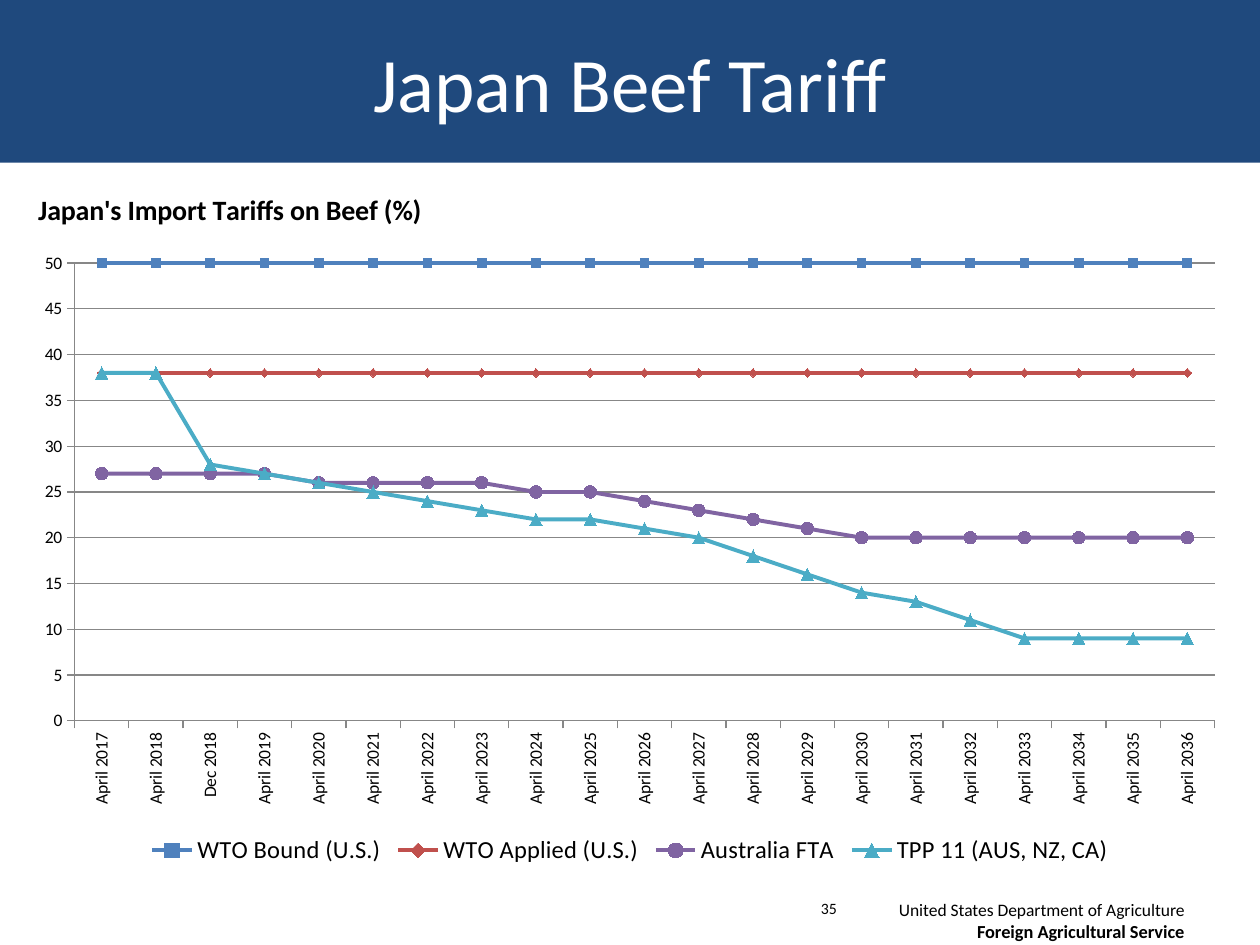
from dataclasses import dataclass

from lxml import etree
from pptx import Presentation
from pptx.chart.data import CategoryChartData
from pptx.dml.color import RGBColor
from pptx.enum.chart import XL_CHART_TYPE, XL_LEGEND_POSITION, XL_MARKER_STYLE, XL_TICK_MARK
from pptx.enum.text import MSO_ANCHOR, PP_ALIGN
from pptx.oxml.ns import qn
from pptx.util import Pt

LINE_MARKERS = XL_CHART_TYPE.LINE_MARKERS
BOTTOM = XL_LEGEND_POSITION.BOTTOM
OUTSIDE = XL_TICK_MARK.OUTSIDE
SQUARE, DIAMOND = XL_MARKER_STYLE.SQUARE, XL_MARKER_STYLE.DIAMOND
CIRCLE, TRIANGLE = XL_MARKER_STYLE.CIRCLE, XL_MARKER_STYLE.TRIANGLE
MIDDLE = MSO_ANCHOR.MIDDLE
LEFT, CENTER, RIGHT = PP_ALIGN.LEFT, PP_ALIGN.CENTER, PP_ALIGN.RIGHT


@dataclass(frozen=True)
class Theme:
    face: str = "Calibri"
    banner: RGBColor = RGBColor(0x1F, 0x49, 0x7D)
    banner_text: RGBColor = RGBColor(0xFF, 0xFF, 0xFF)
    text: RGBColor = RGBColor(0, 0, 0)
    grid: RGBColor = RGBColor(0x87, 0x87, 0x87)
    bound: RGBColor = RGBColor(0x4F, 0x81, 0xBD)
    applied: RGBColor = RGBColor(0xC0, 0x50, 0x4D)
    australia: RGBColor = RGBColor(0x80, 0x64, 0xA2)
    tpp: RGBColor = RGBColor(0x4B, 0xAC, 0xC6)
    title_size: float = 44
    chart_title_size: float = 16
    legend_size: float = 14
    axis_size: float = 10
    department_size: float = 10
    service_size: float = 10.5
    number_size: float = 9


THEME = Theme()

PERIODS = ["April 2017", "April 2018", "Dec 2018"] + [f"April {year}" for year in range(2019, 2037)]

# name, tariff rates, colour, marker style, marker size
TARIFFS = [
    ("WTO Bound (U.S.)", [50] * 21, THEME.bound, SQUARE, 5),
    ("WTO Applied (U.S.)", [38] * 21, THEME.applied, DIAMOND, 5),
    ("Australia FTA",
     [27] * 4 + [26] * 4 + [25, 25, 24, 23, 22, 21] + [20] * 7,
     THEME.australia, CIRCLE, 7),
    ("TPP 11 (AUS, NZ, CA)",
     [38, 38, 28, 27, 26, 25, 24, 23, 22, 22, 21, 20, 18, 16, 14, 13, 11, 9, 9, 9, 9],
     THEME.tpp, TRIANGLE, 7),
]


def style_font(font, size, color=THEME.text, bold=False):
    font.name = THEME.face
    font.size = Pt(size)
    font.bold = bold
    font.color.rgb = color


def add_banner(slide, box, text):
    title = slide.shapes.title
    title.left, title.top, title.width, title.height = box
    title.fill.solid()
    title.fill.fore_color.rgb = THEME.banner
    frame = title.text_frame
    frame.text = text
    frame.vertical_anchor = MIDDLE
    paragraph = frame.paragraphs[0]
    paragraph.alignment = CENTER
    style_font(paragraph.font, THEME.title_size, THEME.banner_text)


def add_lines(slide, box, lines, alignment):
    """Add a text box; each line is (text, size, bold)."""
    frame = slide.shapes.add_textbox(*box).text_frame
    frame.word_wrap = True
    frame.text = "\n".join(text for text, _, _ in lines)
    for paragraph, (_, size, bold) in zip(frame.paragraphs, lines):
        paragraph.alignment = alignment
        style_font(paragraph.font, size, bold=bold)


def set_layout(parent, index, **fractions):
    """Place a chart part by fractions of the chart's size."""
    for old in parent.findall(qn("c:layout")):
        parent.remove(old)
    layout = etree.Element(qn("c:layout"))
    parent.insert(index, layout)
    manual = etree.SubElement(layout, qn("c:manualLayout"))
    if "w" in fractions and index == 0:
        etree.SubElement(manual, qn("c:layoutTarget")).set("val", "inner")
    for axis in ("x", "y"):
        etree.SubElement(manual, qn(f"c:{axis}Mode")).set("val", "edge")
    for key, value in fractions.items():
        etree.SubElement(manual, qn(f"c:{key}")).set("val", str(value))


def format_axes(chart):
    values, periods = chart.value_axis, chart.category_axis
    values.minimum_scale, values.maximum_scale, values.major_unit = 0, 50, 5
    values.has_major_gridlines = True
    values.tick_labels.number_format = "General"
    values.tick_labels.number_format_is_linked = False
    for axis in (values, periods):
        axis.major_tick_mark = OUTSIDE
        style_font(axis.tick_labels.font, THEME.axis_size)
    for line in (values.format.line, periods.format.line, values.major_gridlines.format.line):
        line.color.rgb = THEME.grid
        line.width = Pt(0.75)
    label_body = periods._element.find(qn("c:txPr")).find(qn("a:bodyPr"))
    label_body.set("rot", "-5400000")
    label_body.set("vert", "horz")


def format_series(series, color, marker_style, marker_size):
    series.smooth = False
    series.format.line.color.rgb = color
    series.format.line.width = Pt(2.25)
    marker = series.marker
    marker.style, marker.size = marker_style, marker_size
    marker.format.fill.solid()
    marker.format.fill.fore_color.rgb = color
    marker.format.line.color.rgb = color


def add_tariff_chart(slide, box):
    data = CategoryChartData(number_format="General")
    data.categories = PERIODS
    for name, rates, *_ in TARIFFS:
        data.add_series(name, rates)
    chart = slide.shapes.add_chart(LINE_MARKERS, *box, data).chart
    style_font(chart.font, THEME.axis_size)
    chart.plots[0].vary_by_categories = False

    chart.has_title = True
    heading = chart.chart_title.text_frame
    heading.text = "Japan's Import Tariffs on Beef (%)"
    heading.paragraphs[0].alignment = LEFT
    style_font(heading.paragraphs[0].font, THEME.chart_title_size, bold=True)

    chart.has_legend = True
    chart.legend.position = BOTTOM
    chart.legend.include_in_layout = False
    style_font(chart.legend.font, THEME.legend_size)

    format_axes(chart)
    for series, (_, _, color, style, size) in zip(chart.plots[0].series, TARIFFS):
        format_series(series, color, style, size)

    set_layout(chart.chart_title._element, 1, x=0.01, y=0.02)
    set_layout(chart._chartSpace.chart.plotArea, 0, x=0.044, y=0.131, w=0.936, h=0.654)
    set_layout(chart.legend._element, 1, x=0.1, y=0.94, w=0.8, h=0.06)


def main():
    presentation = Presentation()
    presentation.slide_width, presentation.slide_height = Pt(720), Pt(540)
    slide = presentation.slides.add_slide(presentation.slide_layouts[5])

    add_lines(slide, (Pt(498), Pt(510), Pt(186), Pt(32)), [
        ("United States Department of Agriculture", THEME.department_size, False),
        ("Foreign Agricultural Service", THEME.service_size, True),
    ], RIGHT)
    add_banner(slide, (Pt(0), Pt(0), Pt(720), Pt(93)), "Japan Beef Tariff")
    add_lines(slide, (Pt(462), Pt(510), Pt(42), Pt(32)),
              [("35", THEME.number_size, False)], LEFT)
    add_tariff_chart(slide, (Pt(12), Pt(98), Pt(696), Pt(400)))
    presentation.save("out.pptx")


if __name__ == "__main__":
    main()
